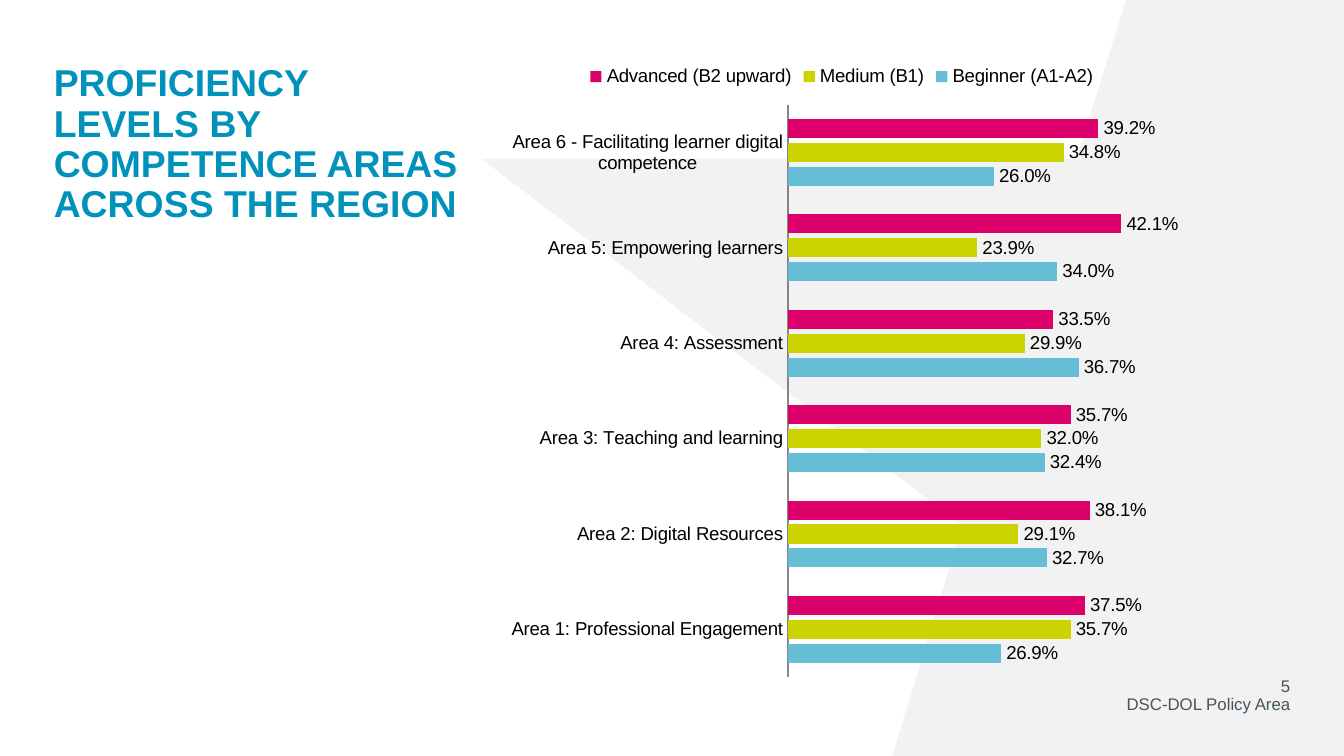
import pptx
import pptx.chart.data
import pptx.dml.color
import pptx.enum.chart
import pptx.enum.text
import pptx.oxml
import pptx.oxml.ns
import pptx.util

Inches = pptx.util.Inches
Pt = pptx.util.Pt
PP_ALIGN = pptx.enum.text.PP_ALIGN
ANCHOR = pptx.enum.text.MSO_ANCHOR

FONT = "Arial"
SLIDE_WIDTH = 10
SLIDE_HEIGHT = SLIDE_WIDTH * 9 / 16
COLOURS = {
    "backdrop": "F2F2F2",
    "title": "0092BB",
    "footer": "455560",
    "text": "000000",
    "axis": "868686",
    "beginner": "66BED6",
    "medium": "CBD300",
    "advanced": "DC006B",
}
BACKDROP = [(8.38, 0), (SLIDE_WIDTH, 0), (SLIDE_WIDTH, SLIDE_HEIGHT),
            (6.64, SLIDE_HEIGHT), (7.16, 3.91), (3.58, 1.18), (8.01, 1.18)]
AREAS = [
    "Area 1: Professional Engagement",
    "Area 2: Digital Resources",
    "Area 3: Teaching and learning",
    "Area 4: Assessment",
    "Area 5: Empowering learners",
    "Area 6 - Facilitating learner digital competence",
]
LEVELS = [
    ("Beginner (A1-A2)", "beginner", [0.269, 0.327, 0.324, 0.367, 0.34, 0.26]),
    ("Medium (B1)", "medium", [0.357, 0.291, 0.32, 0.299, 0.239, 0.348]),
    ("Advanced (B2 upward)", "advanced", [0.375, 0.381, 0.357, 0.335, 0.421, 0.392]),
]
PERCENT = "0.0%"


def colour(name):
    return pptx.dml.color.RGBColor.from_string(COLOURS[name])


class SlideBuilder:
    def __init__(self, slide):
        self.slide = slide

    def style_text(self, shape, text, size, colour_name, bold, align, anchor):
        frame = shape.text_frame
        frame.text = text
        frame.word_wrap = True
        frame.auto_size = pptx.enum.text.MSO_AUTO_SIZE.NONE
        frame.vertical_anchor = anchor
        frame.margin_left = frame.margin_right = 0
        frame.margin_top = frame.margin_bottom = 0
        paragraph = frame.paragraphs[0]
        paragraph.alignment = align
        font = paragraph.runs[0].font
        font.name, font.size, font.bold = FONT, Pt(size), bold
        font.color.rgb = colour(colour_name)
        return paragraph

    def title(self, text, left, top, width, height):
        title = self.slide.shapes.title
        title.left, title.top = Inches(left), Inches(top)
        title.width, title.height = Inches(width), Inches(height)
        paragraph = self.style_text(title, text, 20, "title", True,
                                    PP_ALIGN.LEFT, ANCHOR.TOP)
        paragraph.line_spacing = 0.9
        paragraph.space_before = Pt(0)

    def backdrop(self, points):
        """Draw a filled outline behind the title."""
        corners = [(Inches(x), Inches(y)) for x, y in points]
        builder = self.slide.shapes.build_freeform(*corners[0])
        builder.add_line_segments(corners[1:], close=True)
        shape = builder.convert_to_shape()
        shape.shadow.inherit = False
        shape.fill.solid()
        shape.fill.fore_color.rgb = colour("backdrop")
        shape.line.fill.background()
        self.slide.shapes.title._element.addprevious(shape._element)

    def footer(self, text, left, top, width, height):
        box = self.slide.shapes.add_textbox(
            Inches(left), Inches(top), Inches(width), Inches(height))
        self.style_text(box, text, 9, "footer", False,
                        PP_ALIGN.RIGHT, ANCHOR.MIDDLE)

    def bar_chart(self, categories, series, left, top, width, height):
        data = pptx.chart.data.CategoryChartData(number_format=PERCENT)
        data.categories = categories
        for name, _, values in series:
            data.add_series(name, values)
        chart = self.slide.shapes.add_chart(
            pptx.enum.chart.XL_CHART_TYPE.BAR_CLUSTERED,
            Inches(left), Inches(top), Inches(width), Inches(height), data).chart
        chart.has_title = False
        chart.font.name, chart.font.size = FONT, Pt(10)
        chart.font.color.rgb = colour("text")
        chart.has_legend = True
        chart.legend.position = pptx.enum.chart.XL_LEGEND_POSITION.TOP
        chart.legend.include_in_layout = False

        plot = chart.plots[0]
        plot.gap_width, plot.overlap = 150, -25
        plot.vary_by_categories = False
        for bars, (_, colour_name, _) in zip(plot.series, series):
            bars.format.fill.solid()
            bars.format.fill.fore_color.rgb = colour(colour_name)
            labels = bars.data_labels
            labels.show_value = True
            labels.number_format = PERCENT
            labels.number_format_is_linked = False
            labels.position = pptx.enum.chart.XL_LABEL_POSITION.OUTSIDE_END

        no_tick = pptx.enum.chart.XL_TICK_MARK.NONE
        chart.category_axis.major_tick_mark = no_tick
        chart.category_axis.format.line.color.rgb = colour("axis")
        chart.category_axis.format.line.width = Pt(0.75)
        chart.value_axis.visible = False
        chart.value_axis.has_major_gridlines = False
        chart.value_axis.minimum_scale = 0
        chart.value_axis.maximum_scale = 0.45
        self.place_plot(chart, x=2.1 / width, y=0.4 / height,
                        w=2.66 / width, h=4.26 / height)

    def place_plot(self, chart, **fractions):
        """Fix the inner plot area as fractions of the chart."""
        area = chart._chartSpace.chart.plotArea
        for old in area.findall(pptx.oxml.ns.qn("c:layout")):
            area.remove(old)
        sizes = "".join(f'<c:{key} val="{value:.4f}"/>'
                        for key, value in fractions.items())
        area.insert(0, pptx.oxml.parse_xml(
            f'<c:layout {pptx.oxml.ns.nsdecls("c")}><c:manualLayout>'
            '<c:layoutTarget val="inner"/><c:xMode val="edge"/><c:yMode val="edge"/>'
            f'{sizes}</c:manualLayout></c:layout>'))


def main():
    presentation = pptx.Presentation()
    presentation.slide_width = Inches(SLIDE_WIDTH)
    presentation.slide_height = Inches(SLIDE_HEIGHT)
    title_only = presentation.slide_layouts[5]
    builder = SlideBuilder(presentation.slides.add_slide(title_only))
    builder.backdrop(BACKDROP)
    builder.title("PROFICIENCY LEVELS BY COMPETENCE AREAS ACROSS THE REGION",
                  0.4, 0.48, 3.05, 0.6)
    builder.footer("5", 9.41, 5.03, 0.19, 0.14)
    builder.footer("DSC-DOL Policy Area", 6.22, 5.17, 3.38, 0.14)
    builder.bar_chart(AREAS, LEVELS, 3.77, 0.38, 5, 4.76)
    presentation.save("out.pptx")


if __name__ == "__main__":
    main()
